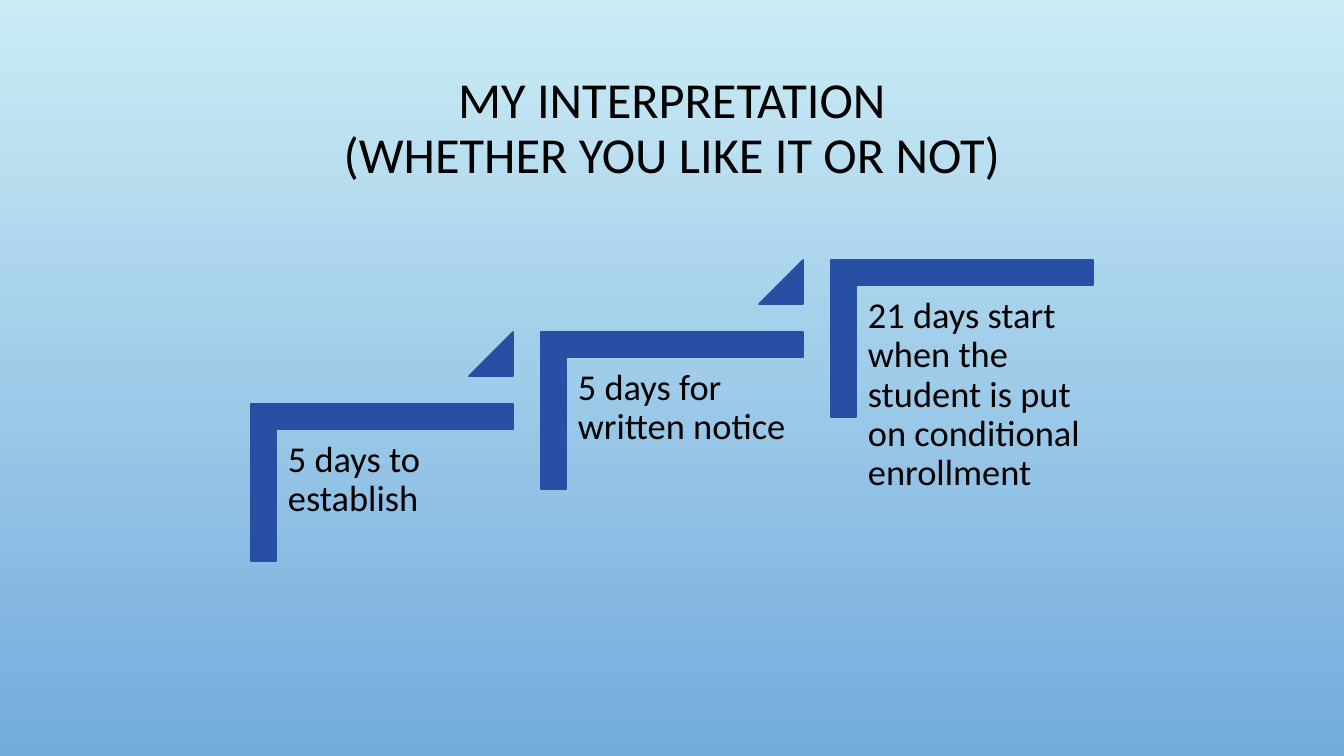
import dataclasses

import pptx
import pptx.dml.color
import pptx.enum.shapes
import pptx.enum.text
import pptx.util

EMU_PER_PX = 914400 / 100.8
SHAPES = pptx.enum.shapes.MSO_SHAPE
ALIGN = pptx.enum.text.PP_ALIGN
ANCHOR = pptx.enum.text.MSO_ANCHOR


@dataclasses.dataclass(frozen=True)
class Theme:
    font: str = "Calibri"
    text: str = "000000"
    accent: str = "274FA4"
    sky_top: str = "CBECF5"
    sky_bottom: str = "73ABDD"
    title_size: int = 36
    step_size: int = 26
    outline: float = 1.25


THEME = Theme()
TITLE = "MY INTERPRETATION\v(WHETHER YOU LIKE IT OR NOT)"
STEPS = [
    "5 days to establish",
    "5 days for written notice",
    "21 days start when the student is put on conditional enrollment",
]
STEP_LEFT, STEP_TOP = 251, 404
STEP_RIGHT, STEP_UP = 290, 72
CORNER_WIDTH, CORNER_HEIGHT = 262, 157
ARROW = 44


def px(length):
    return pptx.util.Emu(round(length * EMU_PER_PX))


def color(value):
    return pptx.dml.color.RGBColor.from_string(value)


def apply(target, formats):
    for name, value in formats.items():
        setattr(target, name, value)


def paint_background(page):
    fill = page.background.fill
    fill.gradient()
    fill.gradient_angle = 270
    for stop, value in zip(fill.gradient_stops, (THEME.sky_top, THEME.sky_bottom)):
        stop.color.rgb = color(value)


def write_text(box, text, size, frame_formats, align):
    frame = box.text_frame
    apply(frame, {"word_wrap": True,
                  "auto_size": pptx.enum.text.MSO_AUTO_SIZE.NONE, **frame_formats})
    para = frame.paragraphs[0]
    para.text = text
    apply(para, {"alignment": align, "line_spacing": 0.9})
    for span in para.runs:
        apply(span.font, {"name": THEME.font, "size": pptx.util.Pt(size)})
        span.font.color.rgb = color(THEME.text)


def add_title(page):
    title = page.shapes.title
    apply(title, {"left": px(101), "top": px(69), "width": px(1142), "height": px(176)})
    # The deep bottom inset lifts the centred lines above the middle of the box.
    insets = {"margin_top": px(5), "margin_bottom": px(60),
              "vertical_anchor": ANCHOR.MIDDLE}
    write_text(title, TITLE, THEME.title_size, insets, ALIGN.CENTER)


def add_accent(page, kind, left, top, width, height, adjustments):
    shape = page.shapes.add_shape(kind, px(left), px(top), px(width), px(height))
    shape.shadow.inherit = False
    for index, value in enumerate(adjustments):
        shape.adjustments[index] = value
    shape.fill.solid()
    shape.fill.fore_color.rgb = color(THEME.accent)
    shape.line.color.rgb = color(THEME.accent)
    shape.line.width = pptx.util.Pt(THEME.outline)
    return shape


def add_corner(page, left, top):
    """Place an upright corner shape so that its quarter turn fills the step."""
    shift = (CORNER_WIDTH - CORNER_HEIGHT) / 2
    corner = add_accent(page, SHAPES.CORNER, left + shift, top - shift,
                        CORNER_HEIGHT, CORNER_WIDTH, (0.161, 0.161))
    corner.rotation = 90


def add_step(page, left, top, text):
    add_corner(page, left, top)
    box = page.shapes.add_textbox(px(left + 26), px(top + 26), px(237), px(208))
    sides = ("left", "top", "right", "bottom")
    insets = {f"margin_{side}": px(11) for side in sides}
    write_text(box, text, THEME.step_size, insets, ALIGN.LEFT)


def add_arrow(page, left, top):
    add_accent(page, SHAPES.ISOSCELES_TRIANGLE, left + CORNER_WIDTH - ARROW,
               top - STEP_UP, ARROW, ARROW, (1,))


def main():
    deck = pptx.Presentation()
    apply(deck, {"slide_width": px(1344), "slide_height": px(756)})
    page = deck.slides.add_slide(deck.slide_layouts.get_by_name("Title Only"))
    paint_background(page)
    add_title(page)
    for index, text in enumerate(STEPS):
        left = STEP_LEFT + index * STEP_RIGHT
        top = STEP_TOP - index * STEP_UP
        add_step(page, left, top, text)
        if index < len(STEPS) - 1:
            add_arrow(page, left, top)
    deck.save("out.pptx")


if __name__ == "__main__":
    main()
